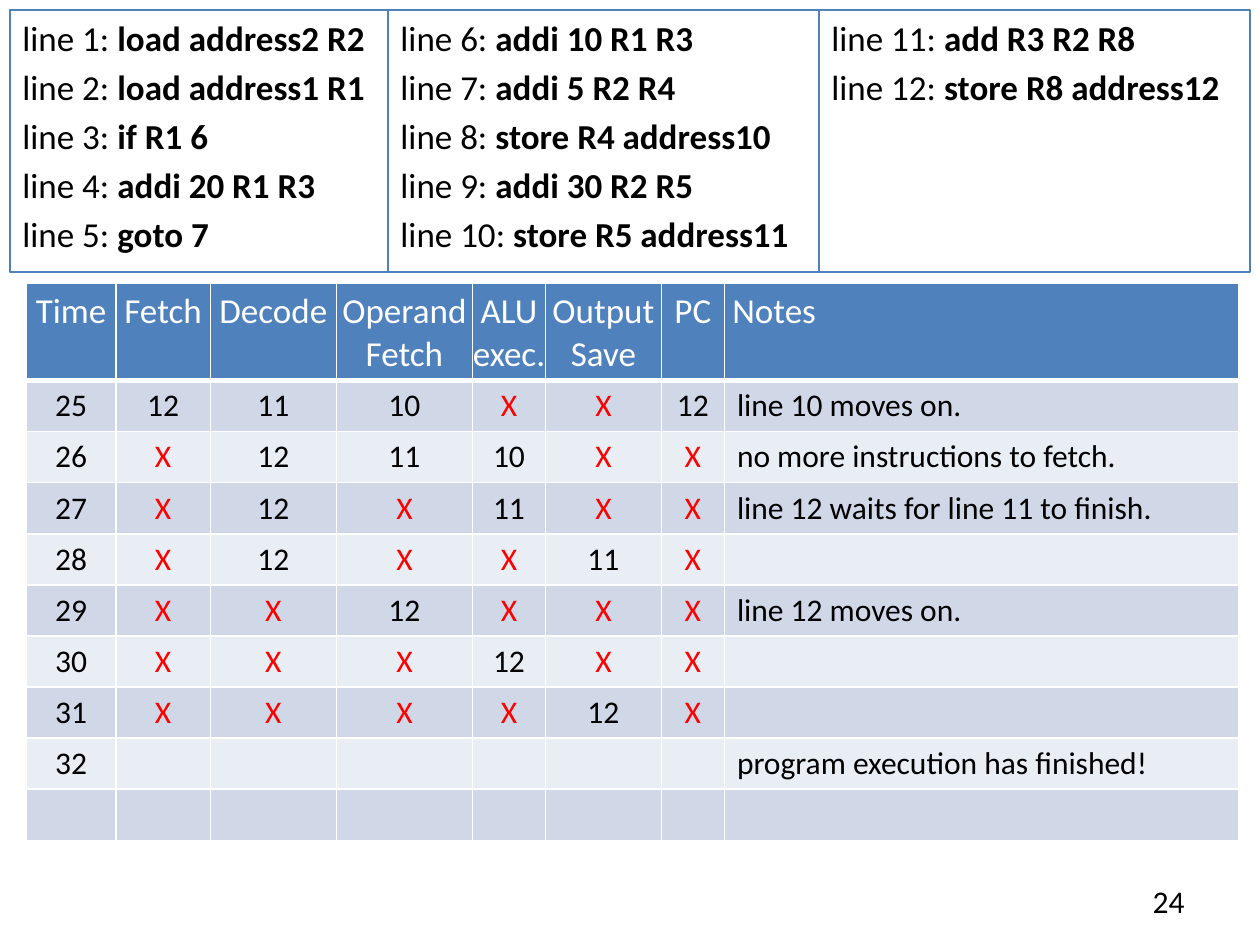
from lxml.etree import SubElement
from pptx import Presentation
from pptx.dml.color import RGBColor
from pptx.enum.shapes import MSO_SHAPE as Shape
from pptx.enum.text import MSO_ANCHOR as Anchor, PP_ALIGN as Align
from pptx.oxml.ns import qn
from pptx.util import Inches, Pt

BLACK = RGBColor(0x00, 0x00, 0x00)
WHITE = RGBColor(0xFF, 0xFF, 0xFF)
RED = RGBColor(0xFF, 0x00, 0x00)
BLUE = RGBColor(0x4F, 0x81, 0xBD)
BANDS = (RGBColor(0xD0, 0xD8, 0xE8), RGBColor(0xE9, 0xED, 0xF4))

WIDTH, HEIGHT = 10, 7.5
MARGIN = 0.08
LISTING_HEIGHT = 2.08
LISTING_WIDTHS = (3, 3.42, 3.42)
LISTING_LINES = 5
PROGRAM = (
    "load address2 R2", "load address1 R1", "if R1 6", "addi 20 R1 R3", "goto 7",
    "addi 10 R1 R3", "addi 5 R2 R4", "store R4 address10", "addi 30 R2 R5",
    "store R5 address11", "add R3 R2 R8", "store R8 address12",
)

TABLE_LEFT, TABLE_TOP, TABLE_HEIGHT = 0.21, 2.25, 4.42
HEADER_HEIGHT = 0.77
COLUMN_WIDTHS = (0.71, 0.75, 1, 1.08, 0.58, 0.92, 0.5, 4.08)
HEADERS = ("Time", "Fetch", "Decode", "Operand Fetch", "ALU exec.", "Output Save", "PC", " Notes")
STAGES = (
    ("25", "12", "11", "10", "X", "X", "12", "line 10 moves on."),
    ("26", "X", "12", "11", "10", "X", "X", "no more instructions to fetch."),
    ("27", "X", "12", "X", "11", "X", "X", "line 12 waits for line 11 to finish."),
    ("28", "X", "12", "X", "X", "11", "X", ""),
    ("29", "X", "X", "12", "X", "X", "X", "line 12 moves on."),
    ("30", "X", "X", "X", "12", "X", "X", ""),
    ("31", "X", "X", "X", "X", "12", "X", ""),
    ("32", "", "", "", "", "", "", "program execution has finished!"),
    ("",) * 8,
)


def set_values(target, values):
    for name, value in values.items():
        setattr(target, name, value)


def add_span(para, text, color=BLACK, **values):
    span = para.add_run()
    span.text = text
    set_values(span.font, {"name": "Calibri", "size": Pt(20), **values})
    span.font.color.rgb = color


def add_listing(page, left, width, lines):
    box = page.shapes.add_shape(
        Shape.RECTANGLE, Inches(left), Inches(MARGIN), Inches(width), Inches(LISTING_HEIGHT))
    box.shadow.inherit = False
    box.fill.background()
    box.line.color.rgb = BLUE
    box.line.width = Pt(0.75)
    frame = box.text_frame
    set_values(frame, {"word_wrap": True, "vertical_anchor": Anchor.TOP})
    for index, (number, code) in enumerate(lines):
        para = frame.add_paragraph() if index else frame.paragraphs[0]
        set_values(para, {"alignment": Align.LEFT, "space_before": Pt(4)})
        add_span(para, f"line {number}: ", bold=False)
        add_span(para, code, bold=True)


def add_borders(cell, widths):
    properties = cell._tc.get_or_add_tcPr()
    for side, width in widths.items():
        line = SubElement(properties, qn(f"a:ln{side}"), w=str(Pt(width)))
        fill = SubElement(line, qn("a:solidFill"))
        SubElement(fill, qn("a:srgbClr"), val=str(WHITE))


def fill_cell(cell, text, row, column):
    header = row == 0
    add_borders(cell, {"L": 1, "R": 1, "T": 3 if row == 1 else 1, "B": 3 if header else 1})
    cell.fill.solid()
    cell.fill.fore_color.rgb = BLUE if header else BANDS[(row - 1) % 2]
    if header:
        set_values(cell, {"margin_left": 0, "margin_right": 0})
    cell.vertical_anchor = Anchor.TOP if header else Anchor.MIDDLE
    para = cell.text_frame.paragraphs[0]
    para.alignment = Align.LEFT if column == len(HEADERS) - 1 else Align.CENTER
    if text:
        color = WHITE if header else RED if text == "X" else BLACK
        add_span(para, text, color, size=Pt(20 if header else 18), bold=False)


def add_pipeline_table(page):
    rows = (HEADERS, *STAGES)
    table = page.shapes.add_table(
        len(rows), len(HEADERS), Inches(TABLE_LEFT), Inches(TABLE_TOP),
        Inches(sum(COLUMN_WIDTHS)), Inches(TABLE_HEIGHT)).table
    for column, width in zip(table.columns, COLUMN_WIDTHS):
        column.width = Inches(width)
    body_height = (TABLE_HEIGHT - HEADER_HEIGHT) / len(STAGES)
    for row, texts in enumerate(rows):
        table.rows[row].height = Inches(body_height if row else HEADER_HEIGHT)
        for column, text in enumerate(texts):
            fill_cell(table.cell(row, column), text, row, column)


def add_page_number(page, number):
    width, height = 7 / 30 * WIDTH, 0.4
    box = page.shapes.add_textbox(
        Inches(0.95 * WIDTH - width), Inches(0.98 * HEIGHT - height), Inches(width), Inches(height))
    box.text_frame.word_wrap = True
    para = box.text_frame.paragraphs[0]
    para.alignment = Align.RIGHT
    add_span(para, number, size=Pt(18))


def main():
    deck = Presentation()
    set_values(deck, {"slide_width": Inches(WIDTH), "slide_height": Inches(HEIGHT)})
    page = deck.slides.add_slide(deck.slide_layouts[6])
    add_page_number(page, "24")
    add_pipeline_table(page)
    numbered = list(enumerate(PROGRAM, start=1))
    for index, width in enumerate(LISTING_WIDTHS):
        left = MARGIN + sum(LISTING_WIDTHS[:index])
        start = index * LISTING_LINES
        add_listing(page, left, width, numbered[start:start + LISTING_LINES])
    deck.save("out.pptx")


if __name__ == "__main__":
    main()
